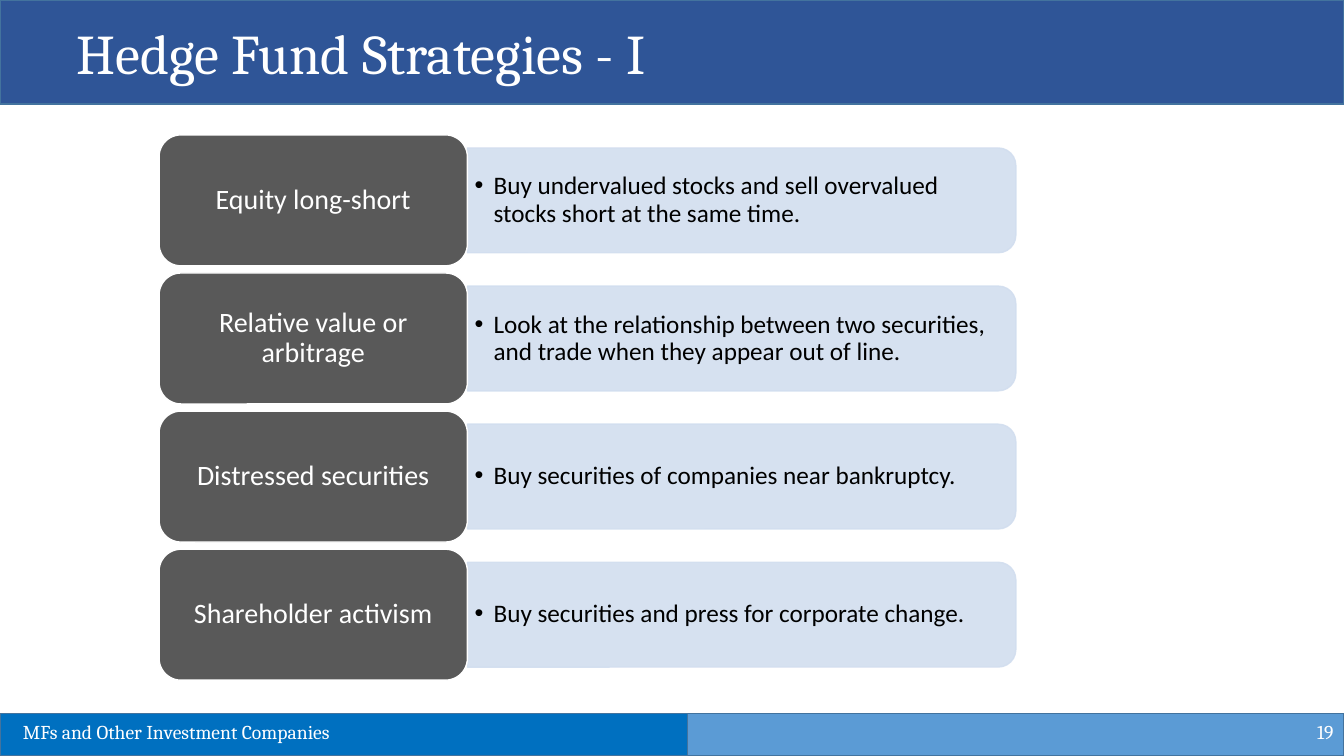
"""Build the slide on hedge fund strategies."""
from dataclasses import dataclass

from lxml import etree
from pptx import Presentation
from pptx.dml.color import RGBColor
from pptx.enum.shapes import MSO_SHAPE
from pptx.enum.text import MSO_ANCHOR, MSO_AUTO_SIZE, PP_ALIGN
from pptx.oxml.ns import qn
from pptx.shapes.autoshape import Shape
from pptx.slide import Slide
from pptx.util import Cm, Pt

RECTANGLE = MSO_SHAPE.RECTANGLE
ROUNDED = MSO_SHAPE.ROUNDED_RECTANGLE
ROUNDED_TOP = MSO_SHAPE.ROUND_2_SAME_RECTANGLE
TOP, MIDDLE = MSO_ANCHOR.TOP, MSO_ANCHOR.MIDDLE
LEFT, CENTER, RIGHT = PP_ALIGN.LEFT, PP_ALIGN.CENTER, PP_ALIGN.RIGHT
NO_AUTOFIT = MSO_AUTO_SIZE.NONE

WHITE = RGBColor(0xFF, 0xFF, 0xFF)
BLACK = RGBColor(0x00, 0x00, 0x00)
NAVY = RGBColor(0x2F, 0x55, 0x97)
BLUE = RGBColor(0x00, 0x70, 0xC0)
SKY = RGBColor(0x5B, 0x9B, 0xD5)
EDGE = RGBColor(0x43, 0x73, 0x9E)
GREY = RGBColor(0x59, 0x59, 0x59)
PALE = RGBColor(0xD2, 0xDE, 0xEF)

SLIDE_WIDTH, SLIDE_HEIGHT = 33.87, 19.05
BANNER_HEIGHT = 2.62
FOOTER_TOP, FOOTER_SPLIT = 17.98, 17.32
LABEL_LEFT, LABEL_WIDTH, LABEL_HEIGHT = 4.01, 7.77, 3.3
PANEL_LEFT = LABEL_LEFT + LABEL_WIDTH
PANEL_WIDTH, PANEL_HEIGHT = 13.82, 2.64
DESCRIPTION_WIDTH, DESCRIPTION_HEIGHT = 13.69, 2.39
FIRST_CENTER, ROW_PITCH = 5.05, 3.48
BULLET_INDENT = 0.48


@dataclass(frozen=True)
class Box:
    """A rectangle in centimetres."""

    left: float
    top: float
    width: float
    height: float


@dataclass(frozen=True)
class TextStyle:
    """The look of one block of text."""

    font: str
    size: int
    color: RGBColor = WHITE
    align: PP_ALIGN = LEFT
    anchor: MSO_ANCHOR = TOP
    line_spacing: float = 1.0
    margin_x: float = 0.25
    margin_y: float = 0.13


@dataclass(frozen=True)
class Strategy:
    """A strategy name and what it does."""

    name: str
    description: str


TITLE_STYLE = TextStyle("Cambria", 40)
FOOTER_STYLE = TextStyle("Cambria", 14)
NUMBER_STYLE = TextStyle("Cambria", 14, align=RIGHT, anchor=MIDDLE)
LABEL_STYLE = TextStyle("Calibri", 20, WHITE, CENTER, MIDDLE, 0.9, 0.36, 0.26)
DESCRIPTION_STYLE = TextStyle("Calibri", 18, BLACK, LEFT, MIDDLE, 0.9, 0.18, 0.1)

STRATEGIES = (
    Strategy("Equity long-short",
             "Buy undervalued stocks and sell overvalued stocks short at the same time."),
    Strategy("Relative value or arbitrage",
             "Look at the relationship between two securities, "
             "and trade when they appear out of line."),
    Strategy("Distressed securities", "Buy securities of companies near bankruptcy."),
    Strategy("Shareholder activism", "Buy securities and press for corporate change."),
)


def place(box: Box) -> tuple[Cm, Cm, Cm, Cm]:
    """Turn a box into lengths."""
    return Cm(box.left), Cm(box.top), Cm(box.width), Cm(box.height)


def write(shape: Shape, text: str, style: TextStyle) -> None:
    """Set and format the text of a shape."""
    frame = shape.text_frame
    frame.text = text
    frame.word_wrap = True
    frame.auto_size = NO_AUTOFIT
    frame.vertical_anchor = style.anchor
    frame.margin_left = frame.margin_right = Cm(style.margin_x)
    frame.margin_top = frame.margin_bottom = Cm(style.margin_y)
    paragraph = frame.paragraphs[0]
    paragraph.alignment = style.align
    paragraph.line_spacing = style.line_spacing
    paragraph.space_before = Pt(0)
    font = paragraph.runs[0].font
    font.name = style.font
    font.size = Pt(style.size)
    font.color.rgb = style.color


def add_text(slide: Slide, box: Box, text: str, style: TextStyle) -> Shape:
    """Add a text box."""
    text_box = slide.shapes.add_textbox(*place(box))
    write(text_box, text, style)
    return text_box


def add_block(slide: Slide, kind: MSO_SHAPE, box: Box, fill: RGBColor, line: RGBColor) -> Shape:
    """Add a filled and outlined shape."""
    shape = slide.shapes.add_shape(kind, *place(box))
    shape.shadow.inherit = False
    shape.fill.solid()
    shape.fill.fore_color.rgb = fill
    shape.line.color.rgb = line
    shape.line.width = Pt(1)
    return shape


def set_opacity(shape: Shape, percent: int) -> None:
    """Make the fill and outline partly transparent."""
    for color in shape.element.spPr.iter(qn("a:srgbClr")):
        etree.SubElement(color, qn("a:alpha")).set("val", str(percent * 1000))


def add_bullet(shape: Shape) -> None:
    """Give the first paragraph a hanging bullet."""
    properties = shape.text_frame.paragraphs[0]._p.get_or_add_pPr()
    properties.set("marL", str(Cm(BULLET_INDENT)))
    properties.set("indent", str(-Cm(BULLET_INDENT)))
    etree.SubElement(properties, qn("a:buFont")).set("typeface", "Arial")
    etree.SubElement(properties, qn("a:buChar")).set("char", "•")


def add_strategy(slide: Slide, strategy: Strategy, center: float) -> None:
    """Add one row: panel, description and label."""
    upright_panel = Box(PANEL_LEFT + (PANEL_WIDTH - PANEL_HEIGHT) / 2,
                        center - PANEL_WIDTH / 2, PANEL_HEIGHT, PANEL_WIDTH)
    panel = add_block(slide, ROUNDED_TOP, upright_panel, PALE, PALE)
    panel.rotation = 90
    set_opacity(panel, 90)
    description_box = Box(PANEL_LEFT, center - DESCRIPTION_HEIGHT / 2,
                          DESCRIPTION_WIDTH, DESCRIPTION_HEIGHT)
    add_bullet(add_text(slide, description_box, strategy.description, DESCRIPTION_STYLE))
    label_box = Box(LABEL_LEFT, center - LABEL_HEIGHT / 2, LABEL_WIDTH, LABEL_HEIGHT)
    label = add_block(slide, ROUNDED, label_box, GREY, WHITE)
    write(label, strategy.name, LABEL_STYLE)


def add_title(slide: Slide) -> None:
    """Add the banner and put the title on it."""
    banner = add_block(slide, RECTANGLE, Box(0, 0, SLIDE_WIDTH, BANNER_HEIGHT), NAVY, EDGE)
    title = slide.shapes.title
    title.left, title.top, title.width, title.height = place(Box(1.68, 0.33, 30.68, 1.96))
    write(title, "Hedge Fund Strategies - I", TITLE_STYLE)
    banner.element.addnext(title.element)


def add_footer(slide: Slide) -> None:
    """Add the footer bars with their texts."""
    height = SLIDE_HEIGHT - FOOTER_TOP
    add_block(slide, RECTANGLE, Box(0, FOOTER_TOP, FOOTER_SPLIT, height), BLUE, EDGE)
    add_block(slide, RECTANGLE,
              Box(FOOTER_SPLIT, FOOTER_TOP, SLIDE_WIDTH - FOOTER_SPLIT, height), SKY, EDGE)
    add_text(slide, Box(26.24, 17.93, 7.62, 1.02), "19", NUMBER_STYLE)
    add_text(slide, Box(0.33, 18.01, 14.07, 0.86),
             "MFs and Other Investment Companies", FOOTER_STYLE)


def main() -> None:
    """Build and save the presentation."""
    presentation = Presentation()
    presentation.slide_width = Cm(SLIDE_WIDTH)
    presentation.slide_height = Cm(SLIDE_HEIGHT)
    slide = presentation.slides.add_slide(presentation.slide_layouts.get_by_name("Title Only"))
    add_title(slide)
    add_footer(slide)
    for row, strategy in enumerate(STRATEGIES):
        add_strategy(slide, strategy, FIRST_CENTER + row * ROW_PITCH)
    presentation.save("out.pptx")


if __name__ == "__main__":
    main()
